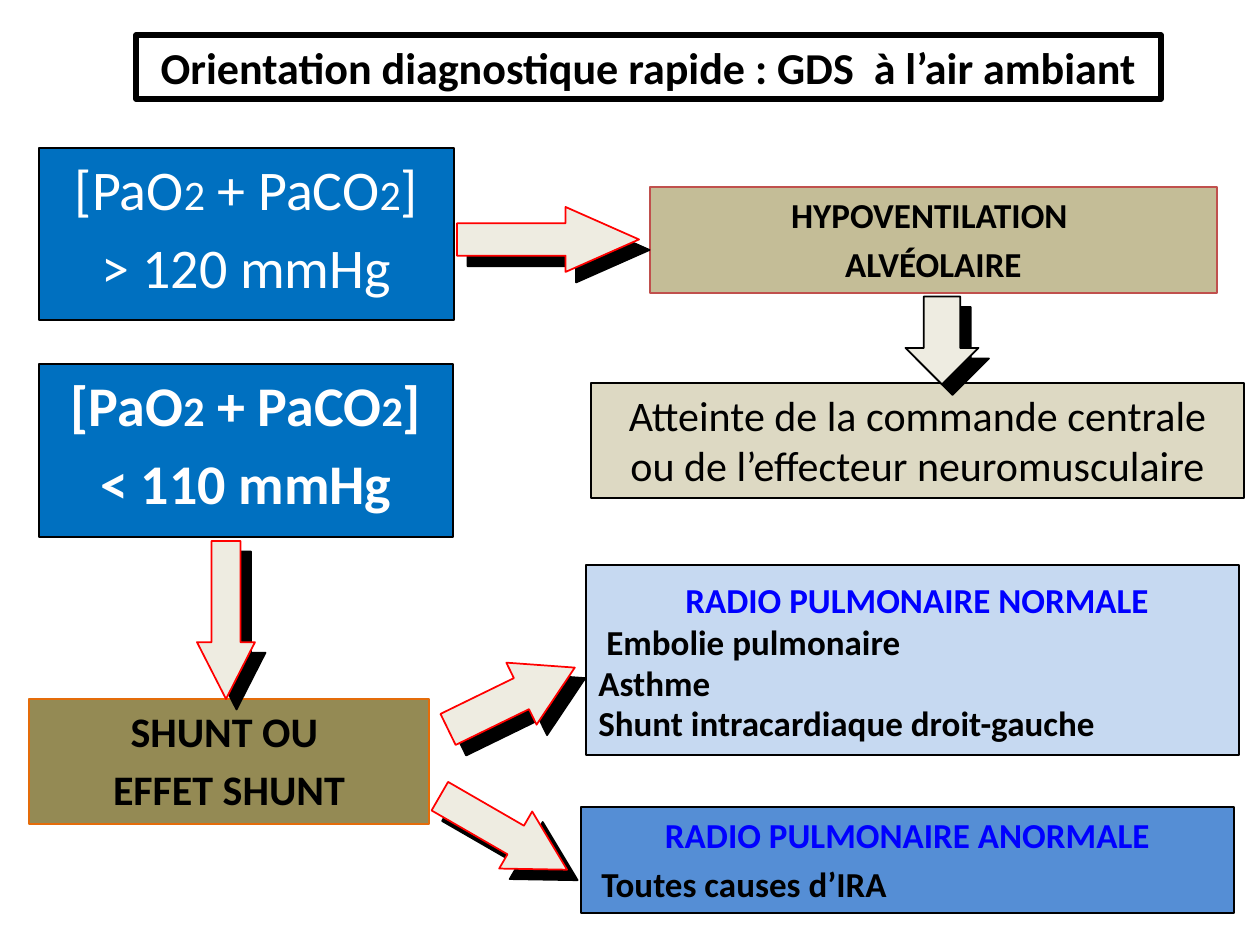
from lxml.etree import SubElement
from pptx import Presentation
from pptx.dml.color import RGBColor
from pptx.enum.shapes import MSO_SHAPE as Shape
from pptx.enum.text import MSO_ANCHOR as Anchor, MSO_AUTO_SIZE as AutoSize, PP_ALIGN as Align
from pptx.oxml.ns import qn
from pptx.util import Emu, Inches, Pt

PX = 914400 / 126
FONT = "Calibri"
COLORS = {
    "black": "000000", "white": "FFFFFF", "red": "FF0000", "brick": "C0504D",
    "orange": "E46C0A", "heading": "0000FF", "blue": "0070C0", "sky": "558ED5",
    "pale blue": "C6D9F1", "tan": "C4BD97", "olive": "948A54",
    "sand": "DDD9C3", "cream": "EEECE1",
}


def rgb(name):
    return RGBColor.from_string(COLORS[name])


def format_box(shape, box, fill, line, width, paragraphs, anchor=Anchor.TOP):
    """Place and colour a box; each paragraph is (alignment, line spacing, runs)."""
    for name, value in zip(("left", "top", "width", "height"), box):
        setattr(shape, name, Emu(round(value * PX)))
    if fill:
        shape.fill.solid()
        shape.fill.fore_color.rgb = rgb(fill)
    shape.line.color.rgb = rgb(line)
    shape.line.width = Pt(width)
    frame = shape.text_frame
    frame_format = {
        "word_wrap": True, "auto_size": AutoSize.NONE, "vertical_anchor": anchor,
        "margin_left": Inches(0.1), "margin_right": Inches(0.1),
        "margin_top": Inches(0.05), "margin_bottom": Inches(0.05),
    }
    for name, value in frame_format.items():
        setattr(frame, name, value)
    for index, (alignment, spacing, runs) in enumerate(paragraphs):
        paragraph = frame.add_paragraph() if index else frame.paragraphs[0]
        properties = paragraph._p.get_or_add_pPr()
        properties.set("marL", "0")
        properties.set("indent", "0")
        SubElement(properties, qn("a:buNone"))
        paragraph.alignment = alignment
        paragraph.line_spacing = spacing
        paragraph.space_before = Pt(0.2 * runs[-1][1] if index else 0)
        for text, size, color, bold in runs:
            run = paragraph.add_run()
            run.text = text
            for name, value in {"name": FONT, "size": Pt(size), "bold": bold}.items():
                setattr(run.font, name, value)
            run.font.color.rgb = rgb(color)


presentation = Presentation()
presentation.slide_width, presentation.slide_height = Inches(10), Inches(7.5)
slide = presentation.slides.add_slide(presentation.slide_layouts[1])
shapes = slide.shapes

# Title
title_runs = [("Orientation diagnostique rapide : GDS  à l’air ambiant", 25.2, "black", True)]
format_box(shapes.title, (136, 35, 1025, 64), None, "black", 3,
           [(Align.CENTER, 1.0, title_runs)], Anchor.MIDDLE)

# Blood gas criteria
criteria = [
    (slide.placeholders[1], (39, 148, 415, 172), "> 120 mmHg", False),
    (shapes.add_shape(Shape.RECTANGLE, 0, 0, 0, 0), (39, 364, 414, 173), "< 110 mmHg", True),
]
formula = [("[PaO", 32), ("2", 24), (" + PaCO", 32), ("2", 24), ("]", 32)]
for shape, box, threshold, bold in criteria:
    shape.shadow.inherit = False
    formula_runs = [(text, size, "white", bold) for text, size in formula]
    format_box(shape, box, "blue", "black", 1, [
        (Align.CENTER, 1.0, formula_runs),
        (Align.CENTER, 1.0, [(threshold, 32, "white", bold)]),
    ])

# Mechanisms and causes: box, fill, line, paragraphs
results = [
    ((650, 187, 567, 106), "tan", "brick", [
        (Align.CENTER, 1.0, [("HYPOVENTILATION ", 20, "black", True)]),
        (Align.CENTER, 1.0, [("ALVÉOLAIRE", 20, "black", True)]),
    ]),
    ((29, 699, 400, 125), "olive", "orange", [
        (Align.CENTER, 1.0, [("SHUNT OU ", 24, "black", True)]),
        (Align.CENTER, 1.0, [("EFFET SHUNT", 24, "black", True)]),
    ]),
    ((591, 383, 653, 115), "sand", "black", [
        (Align.CENTER, 1.0, [("Atteinte de la commande centrale ou de l’effecteur "
                              "neuromusculaire", 24, "black", False)]),
    ]),
    ((581, 807, 653, 106), "sky", "black", [
        (Align.CENTER, 1.0, [("RADIO PULMONAIRE ANORMALE", 20, "heading", True)]),
        (Align.LEFT, 1.0, [(" ", 20, "black", False),
                           ("Toutes causes d’IRA", 20, "black", True)]),
    ]),
    ((586, 565, 653, 190), "pale blue", "black", [
        (Align.CENTER, 1.0, [(" ", 24, "heading", False),
                             ("RADIO PULMONAIRE NORMALE", 20, "heading", True)]),
        (Align.LEFT, 0.8, [(" ", 20, "black", False),
                           ("Embolie pulmonaire", 20, "black", True)]),
        (Align.LEFT, 0.8, [("Asthme", 20, "black", True)]),
        (Align.LEFT, 0.8, [("Shunt intracardiaque droit-gauche", 20, "black", True)]),
    ]),
]
for box, fill, line, paragraphs in results:
    shape = shapes.add_shape(Shape.RECTANGLE, 0, 0, 0, 0)
    shape.shadow.inherit = False
    format_box(shape, box, fill, line, 1, paragraphs)

# Arrows: box before rotation, rotation, head length, line
arrows = [
    ((457, 207, 182, 65), 0, 1.13, "red"),
    ((147, 591, 158, 58), 90, 0.98, "red"),
    ((898, 304, 88, 73), 90, 0.5, "black"),
    ((441, 664, 141, 69), 334, 0.86, "red"),
    ((430, 800, 147, 66), 30, 0.9, "red"),
]
for box, rotation, head, line in arrows:
    arrow = shapes.add_shape(Shape.RIGHT_ARROW, *(Emu(round(value * PX)) for value in box))
    arrow.rotation = rotation
    arrow.adjustments[0], arrow.adjustments[1] = 0.5, head
    arrow.fill.solid()
    arrow.fill.fore_color.rgb = rgb("cream")
    arrow.line.color.rgb = rgb(line)
    arrow.line.width = Pt(1)
    arrow.shadow.inherit = False
    effects = arrow._element.spPr.find(qn("a:effectLst"))
    shadow = SubElement(effects, qn("a:outerShdw"), dist=str(Pt(8.5)),
                        dir=str(45 * 60000), algn="ctr", rotWithShape="0")
    SubElement(shadow, qn("a:srgbClr"), val=COLORS["black"])

presentation.save("out.pptx")
